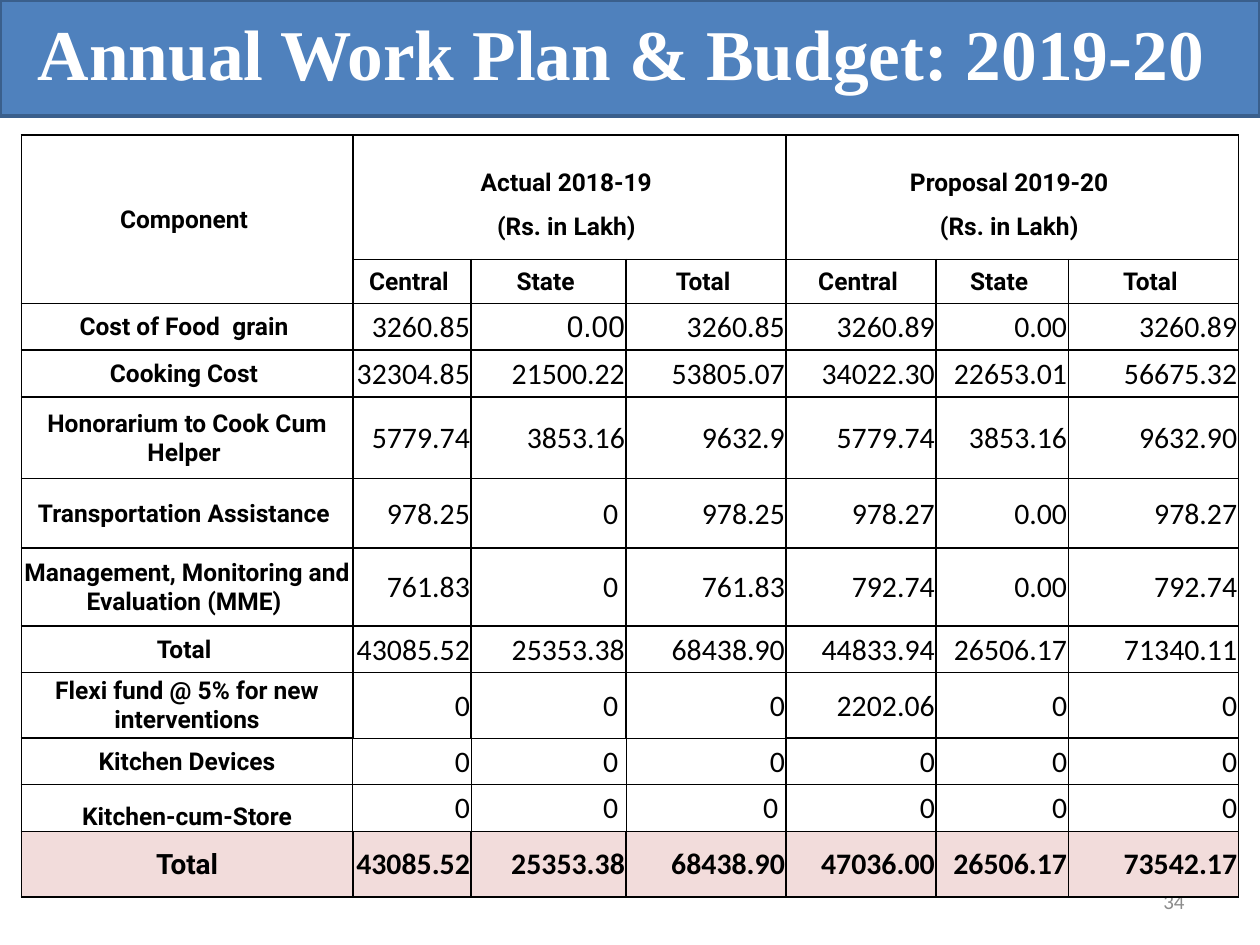
from lxml import etree
from pptx import Presentation
from pptx.dml.color import RGBColor
from pptx.enum.text import MSO_ANCHOR, MSO_AUTO_SIZE, PP_ALIGN
from pptx.oxml.ns import qn
from pptx.util import Inches, Pt

CENTER, RIGHT = PP_ALIGN.CENTER, PP_ALIGN.RIGHT
MIDDLE, BOTTOM = MSO_ANCHOR.MIDDLE, MSO_ANCHOR.BOTTOM
NO_AUTOFIT = MSO_AUTO_SIZE.NONE

BLACK = RGBColor(0x00, 0x00, 0x00)
WHITE = RGBColor(0xFF, 0xFF, 0xFF)
GREY = RGBColor(0x8C, 0x8C, 0x8C)
BLUE = RGBColor(0x4F, 0x81, 0xBD)
DARK_BLUE = RGBColor(0x3A, 0x5F, 0x8C)
PINK = RGBColor(0xF2, 0xDC, 0xDB)

COLUMN_WIDTHS = [2.63, 0.94, 1.23, 1.27, 1.19, 1.05, 1.35]
ROW_HEIGHTS = [0.99, 0.35, 0.37, 0.37, 0.65, 0.55, 0.62, 0.37, 0.52, 0.37, 0.37, 0.52]
HEADER_ROWS = 2
STORE_ROW, TOTAL_ROW = 10, 11
ROWS = [
    ["Component ", "Actual 2018-19 \n(Rs. in Lakh) ", "", "", "Proposal 2019-20 \n(Rs. in Lakh) ", "", ""],
    ["", "Central ", "State ", "Total ", "Central ", "State ", "Total "],
    ["Cost of Food  grain ", "3260.85", "0.00", "3260.85", "3260.89", "0.00", "3260.89"],
    ["Cooking Cost ", "32304.85", "21500.22", "53805.07", "34022.30", "22653.01", "56675.32"],
    ["Honorarium to Cook Cum Helper ", "5779.74", "3853.16", "9632.9", "5779.74", "3853.16", "9632.90"],
    ["Transportation Assistance ", "978.25", "0 ", "978.25", "978.27", "0.00", "978.27"],
    ["Management, Monitoring and Evaluation (MME) ", "761.83", "0 ", "761.83", "792.74", "0.00", "792.74"],
    ["Total ", "43085.52", "25353.38", "68438.90", "44833.94", "26506.17", "71340.11"],
    ["Flexi fund @ 5% for new interventions", "0", "0 ", "0", "2202.06", "0", "0"],
    ["Kitchen Devices", "0", "0 ", "0", "0", "0", "0"],
    ["Kitchen-cum-Store", " 0", "0 ", "0 ", "0", "0", "0"],
    ["Total", "43085.52", "25353.38", "68438.90", "47036.00", "26506.17", "73542.17"],
]
THIN_BELOW = {(row, column) for row in (8, 9) for column in (1, 2, 3)}
THIN_RIGHT = {(row, column) for row in (9, 10) for column in (0, 1, 2)}


def format_text(text_frame, alignment, font_name, size, color, bold):
    for paragraph in text_frame.paragraphs:
        paragraph.alignment = alignment
        for run in paragraph.runs:
            run.font.name = font_name
            run.font.size = Pt(size)
            run.font.color.rgb = color
            run.font.bold = bold


def draw_border(cell, side, thin):
    line = etree.SubElement(cell._tc.get_or_add_tcPr(), qn(f"a:ln{side}"), w=str(Pt(0.5 if thin else 1)))
    fill = etree.SubElement(line, qn("a:solidFill"))
    etree.SubElement(fill, qn("a:srgbClr"), val=str(BLACK))


presentation = Presentation()
presentation.slide_width = Inches(10)
presentation.slide_height = Inches(7.5)
slide = presentation.slides.add_slide(presentation.slide_layouts[5])

title = slide.shapes.title
title.left, title.top = 0, 0
title.width, title.height = presentation.slide_width, Inches(0.92)
title.fill.solid()
title.fill.fore_color.rgb = BLUE
title.line.color.rgb = DARK_BLUE
title.line.width = Pt(2)
title_frame = title.text_frame
title_frame.text = "Annual Work Plan & Budget: 2019-20 "
title_frame.auto_size = NO_AUTOFIT
title_frame.vertical_anchor = MIDDLE
title_frame.margin_top = 0
title_frame.margin_bottom = Inches(0.1)
format_text(title_frame, CENTER, "Times New Roman", 40.8, WHITE, True)

page_number = slide.shapes.add_textbox(Inches(7.17), Inches(6.95), Inches(2.33), Inches(0.4))
page_number.text_frame.word_wrap = True
page_number.text_frame.vertical_anchor = MIDDLE
page_number.text_frame.text = "34"
format_text(page_number.text_frame, RIGHT, "Calibri", 12, GREY, False)

budget_table = slide.shapes.add_table(
    len(ROWS), len(COLUMN_WIDTHS), Inches(0.17), Inches(1.07),
    Inches(sum(COLUMN_WIDTHS)), Inches(sum(ROW_HEIGHTS))).table
budget_table.first_row = False
budget_table.horz_banding = False
for column, width in zip(budget_table.columns, COLUMN_WIDTHS):
    column.width = Inches(width)
for row, height in zip(budget_table.rows, ROW_HEIGHTS):
    row.height = Inches(height)

for row, values in enumerate(ROWS):
    for column, value in enumerate(values):
        cell = budget_table.cell(row, column)
        cell.margin_left = cell.margin_top = cell.margin_right = Inches(0.01)
        cell.margin_bottom = 0
        cell.vertical_anchor = BOTTOM if (row, column) == (STORE_ROW, 0) else MIDDLE
        draw_border(cell, "L", (row, column - 1) in THIN_RIGHT)
        draw_border(cell, "R", (row, column) in THIN_RIGHT)
        draw_border(cell, "T", (row - 1, column) in THIN_BELOW)
        draw_border(cell, "B", (row, column) in THIN_BELOW)
        if row == TOTAL_ROW:
            cell.fill.solid()
            cell.fill.fore_color.rgb = PINK
        else:
            cell.fill.background()
        cell.text_frame.text = value
        if row < HEADER_ROWS or column == 0:
            size = 16 if row == TOTAL_ROW else 14
            format_text(cell.text_frame, CENTER, "Roboto", size, BLACK, True)
        else:
            font_name = "Arial" if (row, column) == (HEADER_ROWS, 2) else "Calibri"
            format_text(cell.text_frame, RIGHT, font_name, 17, BLACK, row == TOTAL_ROW)

budget_table.cell(0, 0).merge(budget_table.cell(1, 0))
for first_column in (1, 4):
    heading = budget_table.cell(0, first_column)
    heading.merge(budget_table.cell(0, first_column + 2))
    for paragraph in heading.text_frame.paragraphs:
        paragraph.line_spacing = 1.5

presentation.save("out.pptx")
